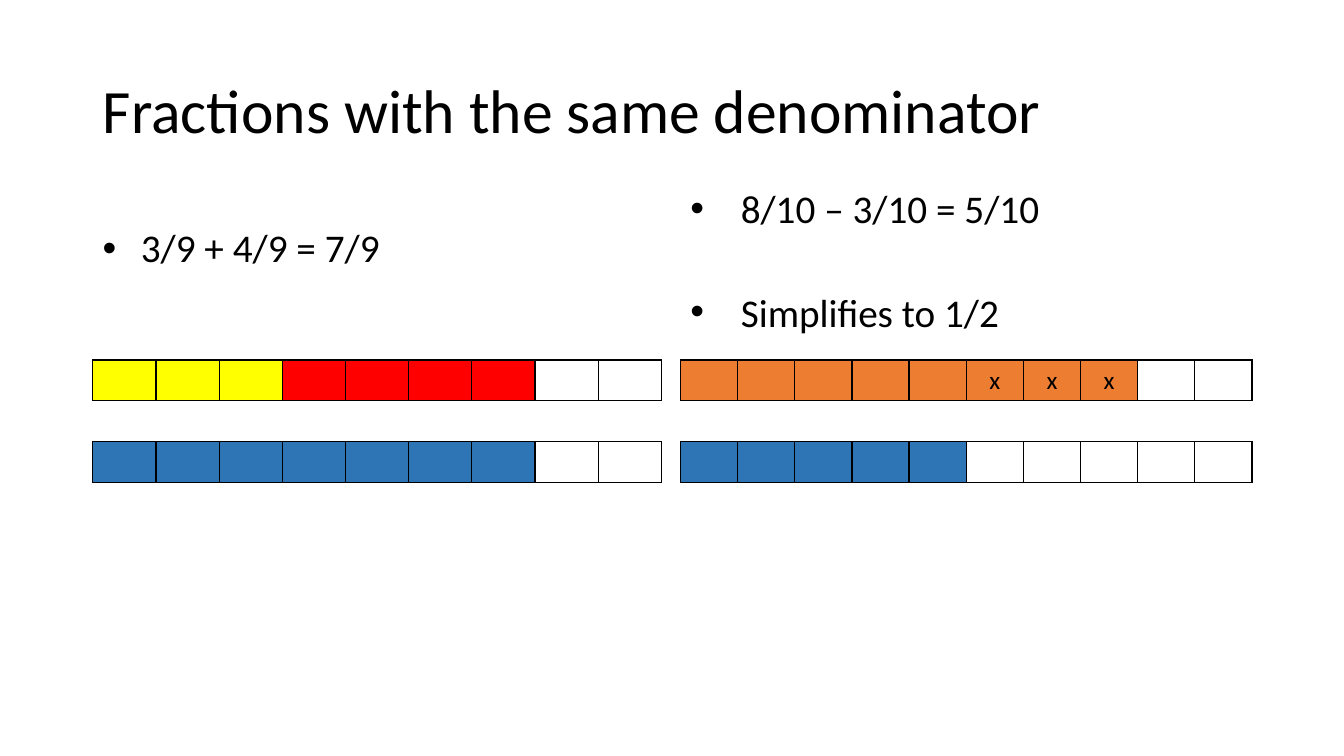
from lxml import etree
from pptx import Presentation
from pptx import util as u
from pptx.dml.color import RGBColor
from pptx.enum import text
from pptx.oxml.ns import qn

COLORS = {"black": "000000", "yellow": "FFFF00", "red": "FF0000",
          "blue": "2E75B6", "orange": "ED7D31"}
LEFT, RIGHT = 2.34, 17.15
ROW_HEIGHT = 1.03


def style(p, size, spacing=None):
    p.line_spacing = spacing
    for r in p.runs:
        r.font.name = "Calibri"
        r.font.size = u.Pt(size)
        r.font.color.rgb = RGBColor.from_string(COLORS["black"])


def add_borders(cell, visible):
    tcPr = cell._tc.get_or_add_tcPr()
    for side in ("lnL", "lnR", "lnT", "lnB"):
        ln = etree.SubElement(tcPr, qn(f"a:{side}"), w=str(u.Pt(1)))
        if side in visible:
            fill = etree.SubElement(ln, qn("a:solidFill"))
            etree.SubElement(fill, qn("a:srgbClr"), val=COLORS["black"])
        else:
            etree.SubElement(ln, qn("a:noFill"))


prs = Presentation()
prs.slide_width, prs.slide_height = u.Cm(33.87), u.Cm(19.05)
s = prs.slides.add_slide(prs.slide_layouts[5])

# Title
title = s.shapes.title
title.left, title.top = u.Cm(LEFT), u.Cm(1.01)
title.width, title.height = u.Cm(29.21), u.Cm(3.68)
tf = title.text_frame
tf.text = "Fractions with the same denominator"
tf.vertical_anchor = text.MSO_ANCHOR.MIDDLE
tf.auto_size = text.MSO_AUTO_SIZE.NONE
tf.paragraphs[0].alignment = text.PP_ALIGN.LEFT
style(tf.paragraphs[0], 44, 0.9)

# Bulleted sums: left, width, height, indent, line spacing, lines
sums = [
    (LEFT, 14.33, 2.29, 0.96, 0.9, ["3/9 + 4/9 = 7/9"]),
    (RIGHT, 14.4, 3.89, 1.27, 0.8, ["8/10 – 3/10 = 5/10", "Simplifies to 1/2"]),
]
for left, width, height, indent, spacing, lines in sums:
    box = s.shapes.add_textbox(u.Cm(left), u.Cm(4.67), u.Cm(width), u.Cm(height))
    tf = box.text_frame
    tf.word_wrap = True
    tf.vertical_anchor = text.MSO_ANCHOR.BOTTOM
    tf.text = "\n".join(lines)
    for i, p in enumerate(tf.paragraphs):
        style(p, 28, spacing)
        p.space_before = u.Pt(47 if i else 10)
        pPr = p._p.get_or_add_pPr()
        pPr.set("marL", str(u.Cm(indent)))
        pPr.set("indent", str(-u.Cm(indent)))
        etree.SubElement(pPr, qn("a:buFont"), typeface="Arial")
        etree.SubElement(pPr, qn("a:buChar"), char="•")

# Fraction bars: left, width, parts, colours of the sum, parts in the result, crossed parts
bars = [
    (LEFT, 14.33, 9, ["yellow"] * 3 + ["red"] * 4, 7, ()),
    (RIGHT, 14.4, 10, ["orange"] * 8, 5, (5, 6, 7)),
]
for left, width, parts, sum_colors, result, crossed in bars:
    frame = s.shapes.add_table(3, parts, u.Cm(left), u.Cm(9.07),
                               u.Cm(width), u.Cm(3 * ROW_HEIGHT))
    table = frame.table
    table.first_row = table.horz_banding = False
    for col in table.columns:
        col.width = u.Cm(width / parts)
    for row, colors in enumerate([sum_colors, [], ["blue"] * result]):
        table.rows[row].height = u.Cm(ROW_HEIGHT)
        for col in range(parts):
            cell = table.cell(row, col)
            add_borders(cell, ("lnT", "lnB") if row == 1 else ("lnL", "lnR", "lnT", "lnB"))
            if col < len(colors):
                cell.fill.solid()
                cell.fill.fore_color.rgb = RGBColor.from_string(COLORS[colors[col]])
            else:
                cell.fill.background()
            if row == 0 and col in crossed:
                cell.text = "x"
                cell.vertical_anchor = text.MSO_ANCHOR.MIDDLE
                p = cell.text_frame.paragraphs[0]
                p.alignment = text.PP_ALIGN.CENTER
                style(p, 18)

prs.save("out.pptx")
